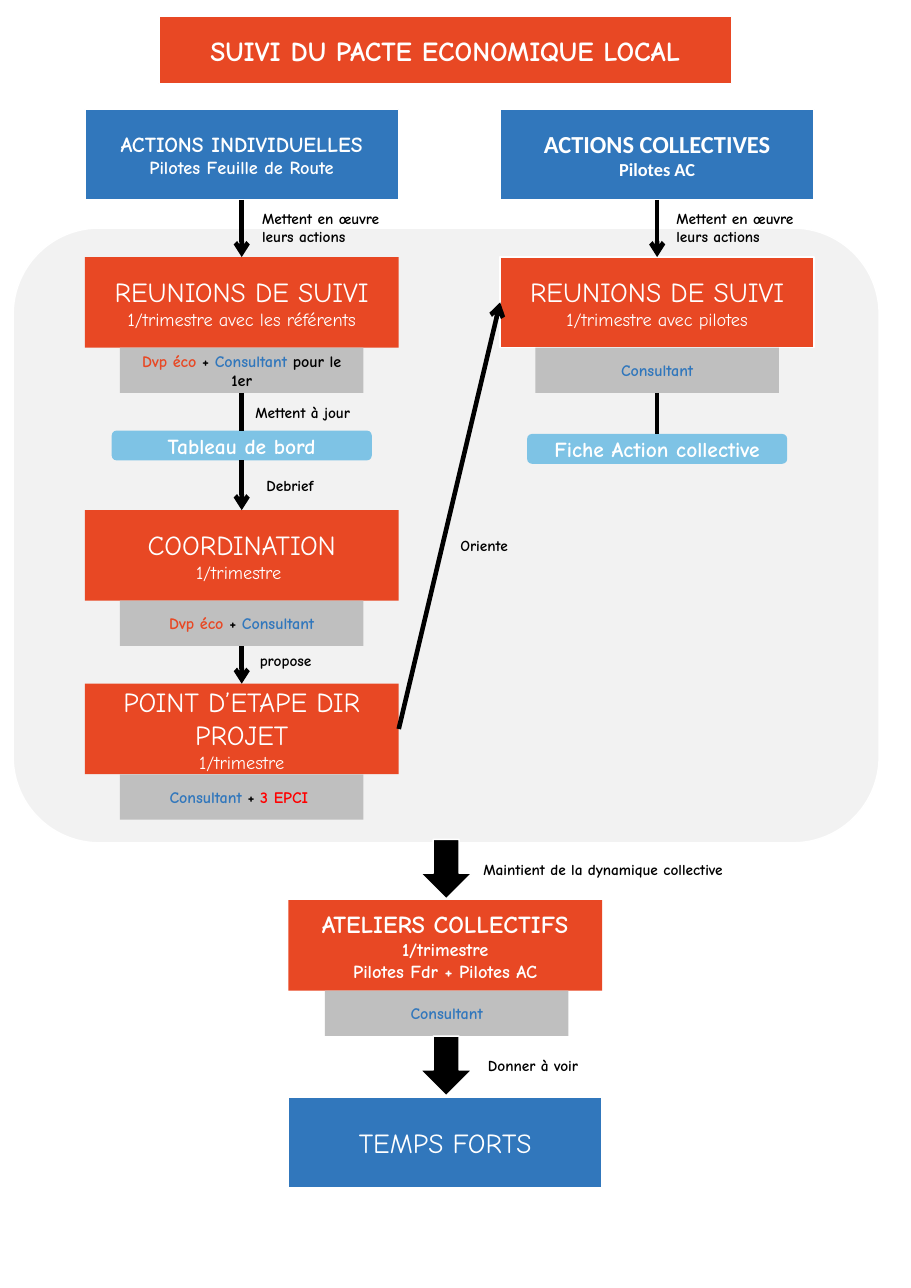
from lxml.etree import SubElement
from pptx import Presentation
from pptx.dml.color import RGBColor
from pptx.enum.shapes import MSO_CONNECTOR, MSO_SHAPE
from pptx.enum.text import MSO_ANCHOR, MSO_AUTO_SIZE, PP_ALIGN
from pptx.oxml.ns import qn
from pptx.util import Pt

WHITE = RGBColor(0xFF, 0xFF, 0xFF)
BLACK = RGBColor(0x00, 0x00, 0x00)
RED = RGBColor(0xFF, 0x00, 0x00)
ORANGE = RGBColor(0xE8, 0x48, 0x24)
BLUE = RGBColor(0x31, 0x77, 0xBC)
SKY = RGBColor(0x7E, 0xC3, 0xE5)
GREY = RGBColor(0xBF, 0xBF, 0xBF)
PALE = RGBColor(0xF2, 0xF2, 0xF2)

FONT = "Comic Neue"
LEFT, RIGHT, MIDDLE = 158, 429.5, 291
BOX_W, BOX_H = 205.2, 59.2
TEAM_W, TEAM_H = 159.2, 29.6
TOP, WEST, BOTTOM, EAST = 0, 1, 2, 3


def write(tf, text, size=12, color=WHITE, bold=False, font=FONT, align=PP_ALIGN.CENTER, new=True):
    """Add a run, in a new paragraph unless new is False."""
    p = tf.add_paragraph() if new and tf.text else tf.paragraphs[-1]
    p.alignment = align
    r = p.add_run()
    r.text = text
    r.font.size = Pt(size)
    r.font.color.rgb = color
    r.font.bold = bold
    r.font.name = font


def block(s, cx, y, w, h, fill, kind=MSO_SHAPE.RECTANGLE, outline=False):
    """Draw a filled shape centred on cx."""
    sp = s.shapes.add_shape(kind, Pt(cx - w / 2), Pt(y), Pt(w), Pt(h))
    sp.shadow.inherit = False
    sp.fill.solid()
    sp.fill.fore_color.rgb = fill
    if outline:
        sp.line.color.rgb = WHITE
        sp.line.width = Pt(1)
    else:
        sp.line.fill.background()
    sp.text_frame.word_wrap = True
    sp.text_frame.vertical_anchor = MSO_ANCHOR.MIDDLE
    return sp


def box(s, cx, y, title, *details, fill=ORANGE, size=18, bold=False, font=FONT,
        outline=False, w=BOX_W, h=BOX_H):
    """Draw a box with a title and smaller detail lines."""
    sp = block(s, cx, y, w, h, fill, outline=outline)
    write(sp.text_frame, title, size=size, bold=bold, font=font)
    for detail in details:
        write(sp.text_frame, detail, bold=bold, font=font)
    return sp


def team(s, cx, y, *parts):
    """Draw the grey strip that names the participants."""
    sp = block(s, cx, y, TEAM_W, TEAM_H, GREY)
    for text, color in parts:
        write(sp.text_frame, text, size=10.5, color=color, bold=True, new=False)
    return sp


def document(s, cx, y, title):
    """Draw a rounded document tag."""
    sp = block(s, cx, y, 170, 19.5, SKY, MSO_SHAPE.ROUNDED_RECTANGLE)
    write(sp.text_frame, title, size=14, bold=True)
    return sp


def link(s, start, end, start_side=BOTTOM, end_side=TOP, arrow=True):
    """Join two shapes with a straight line."""
    c = s.shapes.add_connector(MSO_CONNECTOR.STRAIGHT, 0, 0, 0, 0)
    c.begin_connect(start, start_side)
    c.end_connect(end, end_side)
    c.line.color.rgb = BLACK
    c.line.width = Pt(3)
    if arrow:
        SubElement(c.line._get_or_add_ln(), qn("a:tailEnd"), type="arrow")
    SubElement(c._element.spPr, qn("a:effectLst"))


def label(s, x, y, w, text, h=19.4, wrap=False):
    """Add a small caption beside an arrow."""
    tf = s.shapes.add_textbox(Pt(x), Pt(y), Pt(w), Pt(h)).text_frame
    tf.word_wrap = wrap
    tf.auto_size = MSO_AUTO_SIZE.SHAPE_TO_FIT_TEXT
    write(tf, text, size=10, color=BLACK, bold=True, align=PP_ALIGN.LEFT)


def main():
    """Build the slide and save it."""
    prs = Presentation()
    prs.slide_width, prs.slide_height = Pt(595.4), Pt(841.7)
    s = prs.slides.add_slide(prs.slide_layouts[6])

    eco, plus = ("Dvp éco", ORANGE), (" + ", BLACK)
    adviser = ("Consultant", BLUE)

    panel = block(s, 291.6, 149, 566, 401.8, PALE, MSO_SHAPE.ROUNDED_RECTANGLE, outline=True)
    panel.adjustments[0] = 0.14
    box(s, MIDDLE, 10.8, "SUIVI DU PACTE ECONOMIQUE LOCAL", bold=True, outline=True, w=374.4, h=43.9)

    individual = box(s, LEFT, 71.5, "ACTIONS INDIVIDUELLES", "Pilotes Feuille de Route",
                     fill=BLUE, size=14, bold=True, outline=True)
    review = box(s, LEFT, 168, "REUNIONS DE SUIVI", "1/trimestre avec les référents")
    review_team = team(s, LEFT, 227.2, eco, plus, adviser, (" pour le 1er", BLACK))
    dashboard = document(s, LEFT, 281.4, "Tableau de bord")
    coordination = box(s, LEFT, 333.4, "COORDINATION", "1/trimestre ")
    coordination_team = team(s, LEFT, 392.6, eco, plus, adviser)
    milestone = box(s, LEFT, 446.8, "POINT D’ETAPE DIR PROJET", "1/trimestre")
    team(s, LEFT, 506, adviser, plus, ("3 EPCI ", RED))

    collective = box(s, RIGHT, 71.5, "ACTIONS COLLECTIVES", "Pilotes AC",
                     fill=BLUE, size=16, bold=True, font="Calibri", outline=True)
    pilots = box(s, RIGHT, 168, "REUNIONS DE SUIVI", "1/trimestre avec pilotes", outline=True)
    pilots_team = team(s, RIGHT, 227.2, adviser)
    action_sheet = document(s, RIGHT, 283.6, "Fiche Action collective")

    box(s, MIDDLE, 588.2, "ATELIERS COLLECTIFS", "1/trimestre", "Pilotes Fdr + Pilotes AC",
        size=16, bold=True)
    team(s, 292, 647.4, adviser)
    box(s, MIDDLE, 717.3, "TEMPS FORTS", fill=BLUE, outline=True)
    for y in (548.6, 677.2):
        block(s, 291.6, y, 33.8, 38.9, BLACK, MSO_SHAPE.DOWN_ARROW, outline=True)

    link(s, individual, review)
    link(s, review_team, dashboard, arrow=False)
    link(s, dashboard, coordination)
    link(s, coordination_team, milestone)
    link(s, milestone, pilots, EAST, WEST)
    link(s, collective, pilots)
    link(s, pilots_team, action_sheet, arrow=False)

    for x in (164.2, 435):
        label(s, x, 133.2, 98.6, "Mettent en œuvre leurs actions", h=31.7, wrap=True)
    label(s, 159.8, 260.2, 82.8, "Mettent à jour")
    label(s, 167, 307.6, 49, "Debrief")
    label(s, 162.7, 422, 54, "propose")
    label(s, 293.8, 347, 49.7, "Oriente")
    label(s, 308.9, 558.7, 191.5, "Maintient de la dynamique collective")
    label(s, 311.8, 686.9, 82, "Donner à voir")

    prs.save("out.pptx")


if __name__ == "__main__":
    main()
